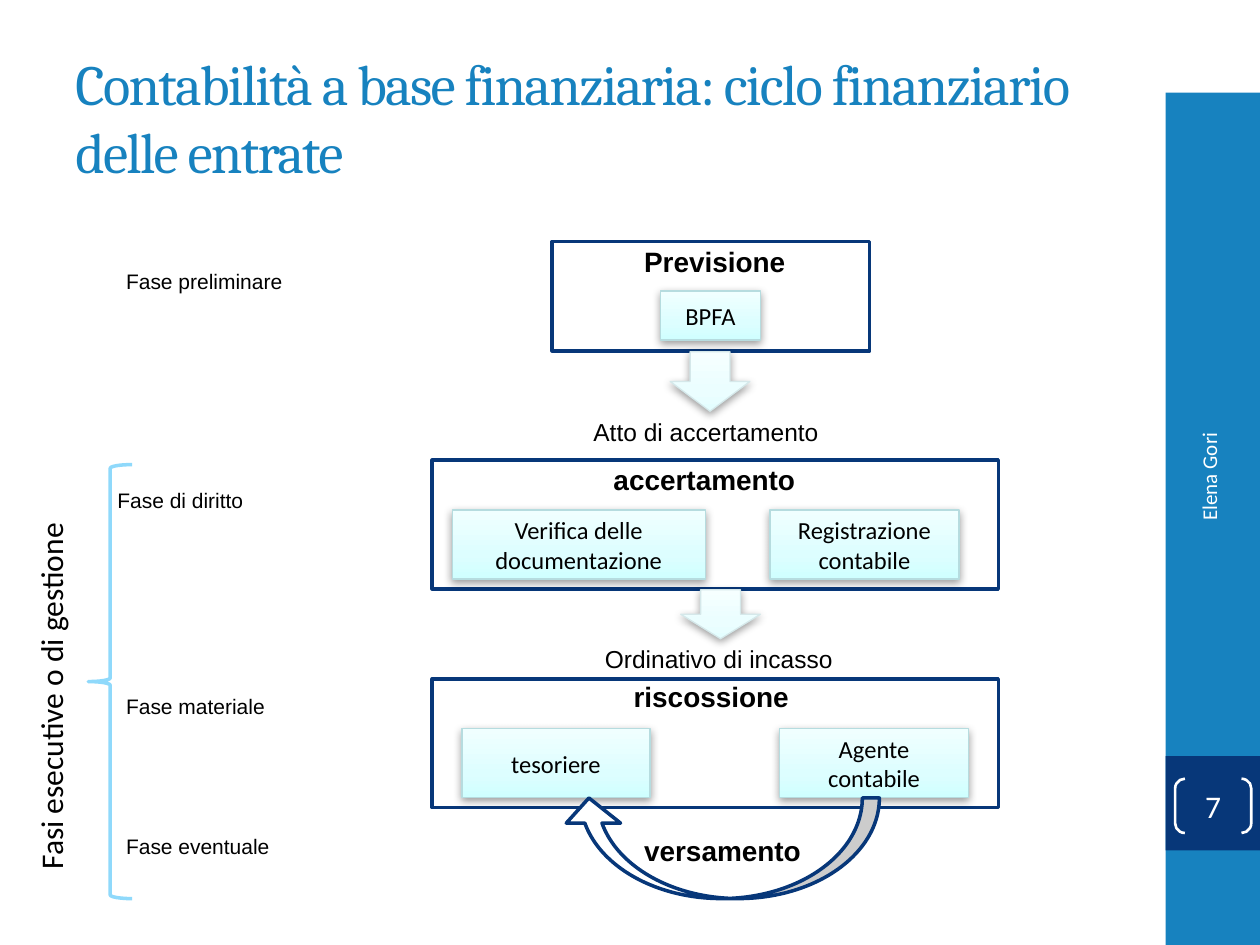
"""Build the slide on the financial cycle of revenues."""
from lxml import etree
from pptx import Presentation
from pptx import util as u
from pptx.dml.color import RGBColor
from pptx.enum import shapes, text
from pptx.oxml import parse_xml
from pptx.oxml.ns import nsdecls, qn

WHITE = RGBColor(0xFF, 0xFF, 0xFF)
BLACK = RGBColor(0, 0, 0)
BLUE = RGBColor(0x17, 0x82, 0xBF)
NAVY = RGBColor(0x07, 0x37, 0x79)
SKY = RGBColor(0x8F, 0xD9, 0xFB)
CARD_LINE = RGBColor(0xB6, 0xDC, 0xDF)
ARROW_LINE = RGBColor(0xD5, 0xE8, 0xEA)
CARD_STOPS = [(0, RGBColor(0xCF, 0xFF, 0xFF)), (35, RGBColor(0xDD, 0xFE, 0xFF)),
              (100, RGBColor(0xF0, 0xFF, 0xFF))]
ARROW_STOPS = [(0, RGBColor(0xE4, 0xFE, 0xFF)), (35, RGBColor(0xEB, 0xFE, 0xFF)),
               (100, RGBColor(0xF6, 0xFF, 0xFF))]

TITLE = "Contabilità a base finanziaria: ciclo finanziario delle entrate"
STAGES = [
    {"panel": (315.5, 138, 181.5, 62.5), "heading": ("Previsione", 361, 136, 97),
     "card_height": 28, "cards": [("BPFA", 377.5, 57)]},
    {"panel": (247, 263, 323.5, 73.5), "heading": ("accertamento", 343.5, 260.5, 119),
     "card_height": 39.5,
     "cards": [("Registrazione contabile", 440, 108),
               ("Verifica delle documentazione", 258.5, 144.5)]},
    {"panel": (247, 388, 323.5, 73.5), "heading": ("riscossione", 355, 384.5, 108),
     "card_height": 39.5,
     "cards": [("Agente contabile", 445.5, 108), ("tesoriere", 264, 107.5)]},
]
CARD_OFFSET = 28.4
ARROWS = [(383, 201, 45.5, 34), (389, 337, 45.5, 28)]
DOCUMENTS = [("Atto di accertamento", 332, 234.5, 148),
             ("Ordinativo di incasso", 338.5, 364.5, 148)]
PHASES = [("Fase preliminare", 65, 150, 119), ("Fase di diritto", 60, 275, 96),
          ("Fase materiale", 65, 393, 97), ("Fase eventuale", 65, 473, 108)]


def write(shape, content, size, font, color=BLACK, bold=False,
          align=text.PP_ALIGN.LEFT, anchor=text.MSO_ANCHOR.TOP):
    frame = shape.text_frame
    frame.word_wrap = True
    frame.vertical_anchor = anchor
    paragraph = frame.paragraphs[0]
    paragraph.alignment = align
    run = paragraph.add_run()
    run.text = content
    run.font.size = u.Pt(size)
    run.font.name = font
    run.font.bold = bold
    run.font.color.rgb = color
    return run


def add_label(slide, content, left, top, width, height, size, font="Arial", **style):
    box = slide.shapes.add_textbox(*map(u.Pt, (left, top, width, height)))
    write(box, content, size, font, **style)
    return box


def add_shape(slide, kind, place, fill=None, line=None, weight=2):
    shape = slide.shapes.add_shape(kind, *map(u.Pt, place))
    shape.shadow.inherit = False
    if fill is None:
        shape.fill.background()
    else:
        shape.fill.solid()
        shape.fill.fore_color.rgb = fill
    if line is None:
        shape.line.fill.background()
    else:
        shape.line.color.rgb = line
        shape.line.width = u.Pt(weight)
    return shape


def add_raised(slide, kind, place, stops, line):
    shape = add_shape(slide, kind, place, WHITE, line, 0.75)
    properties = shape.element.spPr
    marks = "".join(f'<a:gs pos="{position * 1000}"><a:srgbClr val="{color}"/></a:gs>'
                    for position, color in stops)
    gradient = parse_xml(f'<a:gradFill {nsdecls("a")} rotWithShape="1"><a:gsLst>{marks}</a:gsLst>'
                         '<a:lin ang="16200000" scaled="0"/></a:gradFill>')
    properties.replace(properties.find(qn("a:solidFill")), gradient)
    shadow = etree.SubElement(properties.find(qn("a:effectLst")), qn("a:outerShdw"),
                              blurRad=str(u.Pt(5)), dist=str(u.Pt(1.6)),
                              dir="5400000", rotWithShape="0")
    color = etree.SubElement(shadow, qn("a:srgbClr"), val=str(BLACK))
    etree.SubElement(color, qn("a:alpha"), val="38000")
    return shape


def add_stage(slide, stage):
    kind = shapes.MSO_SHAPE.RECTANGLE
    add_shape(slide, kind, stage["panel"], WHITE, NAVY)
    add_label(slide, *stage["heading"], 26.5, 16, bold=True)
    top = stage["panel"][1] + CARD_OFFSET
    for content, left, width in stage["cards"]:
        card = add_raised(slide, kind, (left, top, width, stage["card_height"]),
                          CARD_STOPS, CARD_LINE)
        write(card, content, 14, "Calibri", align=text.PP_ALIGN.CENTER,
              anchor=text.MSO_ANCHOR.MIDDLE)


def add_sidebar(slide):
    middle = text.MSO_ANCHOR.MIDDLE
    rectangle = shapes.MSO_SHAPE.RECTANGLE
    add_shape(slide, rectangle, (666, 53, 54, 487), BLUE)
    add_shape(slide, rectangle, (666, 432, 54, 54), NAVY)
    author = add_label(slide, "Elena Gori", 597.5, 319, 186.5, 29, 12, "Calibri",
                       color=WHITE, align=text.PP_ALIGN.RIGHT, anchor=middle)
    author.rotation = 270
    number = add_shape(slide, shapes.MSO_SHAPE.DOUBLE_BRACKET, (671.5, 445, 43.5, 31),
                       line=WHITE, weight=1.5)
    number.adjustments[0] = 0.18
    frame = number.text_frame
    frame.margin_left = frame.margin_right = frame.margin_top = frame.margin_bottom = 0
    write(number, "7", 18, "Calibri", WHITE, align=text.PP_ALIGN.CENTER, anchor=middle)


def main():
    presentation = Presentation()
    presentation.slide_width, presentation.slide_height = u.Pt(720), u.Pt(540)
    slide = presentation.slides.add_slide(presentation.slide_layouts[6])
    add_sidebar(slide)

    title = add_label(slide, TITLE, 36, 21.5, 600, 90, 32.4, "Cambria",
                      color=BLUE, anchor=text.MSO_ANCHOR.MIDDLE)
    title.text_frame.paragraphs[0].runs[0].font._element.set("spc", "-100")

    for stage in STAGES:
        add_stage(slide, stage)
    for place in ARROWS:
        add_raised(slide, shapes.MSO_SHAPE.DOWN_ARROW, place, ARROW_STOPS, ARROW_LINE)
    for document in DOCUMENTS:
        add_label(slide, *document, 24.5, 14)

    payment = add_shape(slide, shapes.MSO_SHAPE.CURVED_LEFT_ARROW,
                        (383, 394, 57.5, 181.5), WHITE, NAVY)
    payment.rotation = 90
    for index, value in enumerate((0.17, 0.54, 0.25)):
        payment.adjustments[index] = value
    add_label(slide, "versamento", 361, 473, 113, 26.5, 16, bold=True)

    for phase in PHASES:
        add_label(slide, *phase, 21.5, 12)
    add_shape(slide, shapes.MSO_SHAPE.LEFT_BRACE, (50.5, 265.5, 25, 248), line=SKY)
    management = add_label(slide, "Fasi esecutive o di gestione",
                           14.5, 271.5, 36, 232.5, 18, "Calibri")
    management.text_frame._txBody.bodyPr.set("vert", "vert270")

    presentation.save("out.pptx")


if __name__ == "__main__":
    main()
